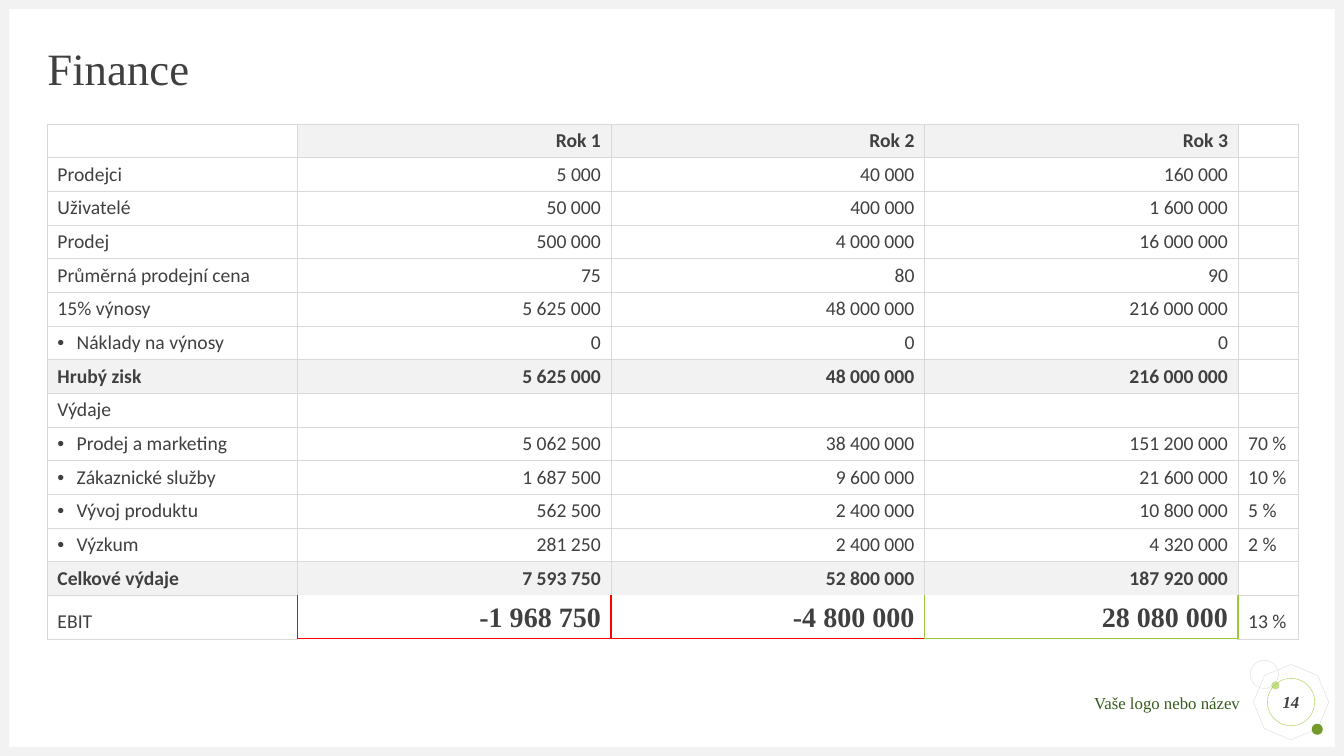
from lxml.etree import SubElement
from pptx import Presentation
from pptx.dml.color import RGBColor
from pptx.enum.shapes import MSO_SHAPE
from pptx.enum.text import MSO_ANCHOR, PP_ALIGN
from pptx.oxml.ns import qn
from pptx.util import Inches, Pt

COLORS = {
    "white": "FFFFFF", "frame": "F2F2F2", "grid": "D9D9D9", "ink": "404040",
    "leaf": "9ACB39", "pale leaf": "C2E088", "dark leaf": "749A29",
    "forest": "375C1E", "loss": "FF0000",
}
HEADING, BODY = "Times New Roman", "Calibri"
WIDTH, HEIGHT, EDGE = 13.33, 7.5, 0.09

BULLETED = ("Náklady na výnosy", "Prodej a marketing", "Zákaznické služby",
            "Vývoj produktu", "Výzkum")
TOTALS = ("Hrubý zisk", "Celkové výdaje")
FINANCES = [
    ("", "Rok 1", "Rok 2", "Rok 3", ""),
    ("Prodejci", "5 000", "40 000", "160 000", ""),
    ("Uživatelé", "50 000", "400 000", "1 600 000", ""),
    ("Prodej", "500 000", "4 000 000", "16 000 000", ""),
    ("Průměrná prodejní cena", "75", "80", "90", ""),
    ("15% výnosy", "5 625 000", "48 000 000", "216 000 000", ""),
    ("Náklady na výnosy", "0", "0", "0", ""),
    ("Hrubý zisk", "5 625 000", "48 000 000", "216 000 000", ""),
    ("Výdaje", "", "", "", ""),
    ("Prodej a marketing", "5 062 500", "38 400 000", "151 200 000", "70 %"),
    ("Zákaznické služby", "1 687 500", "9 600 000", "21 600 000", "10 %"),
    ("Vývoj produktu", "562 500", "2 400 000", "10 800 000", "5 %"),
    ("Výzkum", "281 250", "2 400 000", "4 320 000", "2 %"),
    ("Celkové výdaje", "7 593 750", "52 800 000", "187 920 000", ""),
    ("EBIT", "-1 968 750", "-4 800 000", "28 080 000", "13 %"),
]
COLUMN_WIDTHS = [2.48, 3.11, 3.11, 3.11, 0.6]
ROW_HEIGHTS = [0.32] + [0.33] * 13 + [0.42]
GRID = ("grid", 0.25)
LOSS, PROFIT = ("loss", 1), ("leaf", 1)
EBIT_BORDERS = [  # left, right, top, bottom
    (GRID, LOSS, GRID, GRID),
    (LOSS, LOSS, None, LOSS),
    (LOSS, PROFIT, None, LOSS),
    (PROFIT, PROFIT, None, PROFIT),
    (PROFIT, GRID, GRID, GRID),
]


def rgb(name):
    return RGBColor.from_string(COLORS[name])


def write(frame, text, size=14, font=BODY, color="ink", bold=False, italic=False,
          align=PP_ALIGN.LEFT, spacing=None, bullet=False):
    paragraph = frame.paragraphs[0]
    paragraph.alignment = align
    if spacing:
        paragraph.line_spacing = spacing
    if bullet:
        properties = paragraph._p.get_or_add_pPr()
        properties.set("marL", str(Inches(0.19)))
        properties.set("indent", str(-Inches(0.19)))
        SubElement(properties, qn("a:buFont"), typeface="Arial")
        SubElement(properties, qn("a:buChar"), char="•")
    if not text:
        # An empty cell keeps the row height of its text size
        SubElement(paragraph._p, qn("a:endParaRPr"), sz=str(size * 100))
        return
    run = paragraph.add_run()
    run.text = text
    run.font.size, run.font.name = Pt(size), font
    run.font.bold, run.font.italic = bold, italic
    run.font.color.rgb = rgb(color)


def set_borders(cell, borders):
    properties = cell._tc.get_or_add_tcPr()
    for side, border in zip("LRTB", borders):
        line = SubElement(properties, qn(f"a:ln{side}"))
        if border is None:
            SubElement(line, qn("a:noFill"))
            continue
        color, points = border
        line.set("w", str(Pt(points)))
        fill = SubElement(line, qn("a:solidFill"))
        SubElement(fill, qn("a:srgbClr"), val=COLORS[color])


class FinanceSlide:
    def __init__(self, slide):
        self.shapes = slide.shapes

    def shape(self, kind, left, top, width, height, fill=None, line=None, rotation=0):
        shape = self.shapes.add_shape(
            kind, Inches(left), Inches(top), Inches(width), Inches(height))
        shape.shadow.inherit = False
        shape.rotation = rotation
        if fill:
            shape.fill.solid()
            shape.fill.fore_color.rgb = rgb(fill)
        else:
            shape.fill.background()
        if line:
            shape.line.color.rgb = rgb(line)
            shape.line.width = Pt(0.25)
        else:
            shape.line.fill.background()
        return shape

    def fit(self, frame, anchor):
        frame.margin_left = frame.margin_right = 0
        frame.margin_top = frame.margin_bottom = 0
        frame.word_wrap = True
        frame.vertical_anchor = anchor
        return frame

    def text(self, text, left, top, width, height, anchor=MSO_ANCHOR.TOP, **style):
        box = self.shapes.add_textbox(
            Inches(left), Inches(top), Inches(width), Inches(height))
        write(self.fit(box.text_frame, anchor), text, font=HEADING, **style)

    def table(self, rows, left, top):
        table = self.shapes.add_table(
            len(rows), len(COLUMN_WIDTHS), Inches(left), Inches(top),
            Inches(sum(COLUMN_WIDTHS)), Inches(sum(ROW_HEIGHTS))).table
        table.first_row = table.horz_banding = False
        for column, width in zip(table.columns, COLUMN_WIDTHS):
            column.width = Inches(width)
        for row, height in zip(table.rows, ROW_HEIGHTS):
            row.height = Inches(height)
        for r, values in enumerate(rows):
            label = values[0]
            for c, value in enumerate(values):
                self.cell(table.cell(r, c), value, label, r, c)

    def cell(self, cell, value, label, r, c):
        is_year = 1 <= c <= 3
        shaded = (r == 0 and is_year) or (label in TOTALS and c < 4)
        result = label == "EBIT" and is_year
        if label == "EBIT":
            borders = EBIT_BORDERS[c]
        elif label == "Celkové výdaje" and is_year:
            borders = (GRID, GRID, GRID, None)
        else:
            borders = (GRID,) * 4
        set_borders(cell, borders)
        cell.fill.solid()
        cell.fill.fore_color.rgb = rgb("frame" if shaded else "white")
        cell.vertical_anchor = MSO_ANCHOR.BOTTOM
        write(cell.text_frame, value, size=20 if result else 14,
              font=HEADING if result else BODY, bold=shaded or result,
              align=PP_ALIGN.RIGHT if is_year else PP_ALIGN.LEFT,
              bullet=c == 0 and label in BULLETED)


def main():
    deck = Presentation()
    deck.slide_width, deck.slide_height = Inches(WIDTH), Inches(HEIGHT)
    page = FinanceSlide(deck.slides.add_slide(deck.slide_layouts[6]))

    # Ornament around the page number
    page.shape(MSO_SHAPE.OCTAGON, 12.46, 6.62, 0.69, 0.69, line="grid", rotation=22.7)
    page.shape(MSO_SHAPE.OVAL, 12.61, 6.76, 0.08, 0.08, fill="pale leaf")
    page.shape(MSO_SHAPE.OVAL, 13.01, 7.18, 0.11, 0.11, fill="dark leaf")
    page.text("Vaše logo nebo název", 9.55, 6.87, 2.75, 0.2, size=12,
              color="forest", align=PP_ALIGN.RIGHT)
    page.shape(MSO_SHAPE.OVAL, 12.4, 6.55, 0.28, 0.28, line="grid")

    # Page frame
    for left, top, width, height in (
            (0, HEIGHT - EDGE, WIDTH, EDGE), (0, 0, WIDTH, EDGE),
            (0, 0, EDGE, HEIGHT), (WIDTH - EDGE, 0, EDGE, HEIGHT)):
        page.shape(MSO_SHAPE.RECTANGLE, left, top, width, height, fill="frame")

    # Title and table
    page.text("Finance", 0.47, 0.47, 12.4, 0.47, anchor=MSO_ANCHOR.MIDDLE,
              size=32, spacing=0.9)
    page.table(FINANCES, 0.47, 1.23)

    # Page number
    number = page.shape(MSO_SHAPE.OVAL, 12.57, 6.73, 0.47, 0.47, line="leaf")
    write(page.fit(number.text_frame, MSO_ANCHOR.MIDDLE), "14", size=12, font=HEADING,
          bold=True, italic=True, align=PP_ALIGN.CENTER)

    deck.save("out.pptx")


if __name__ == "__main__":
    main()
